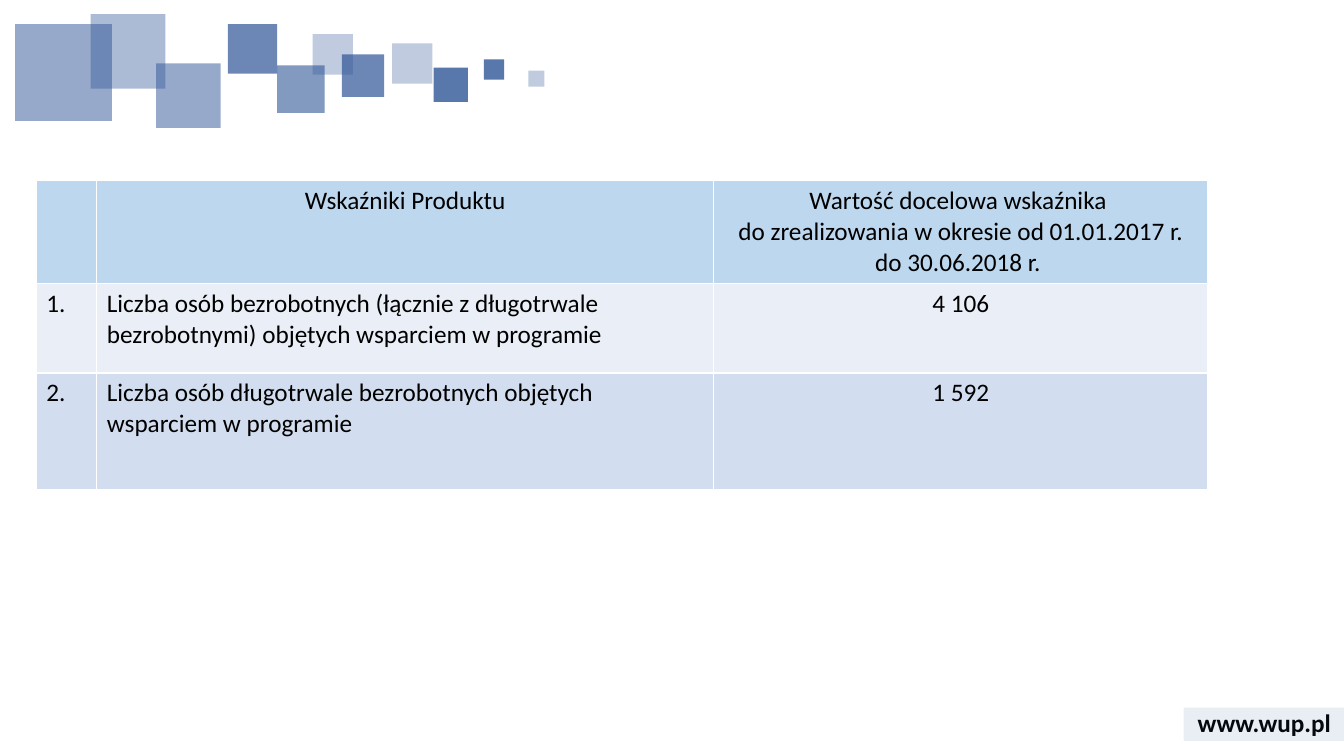
from dataclasses import dataclass

from lxml import etree
from pptx import Presentation
from pptx.dml.color import RGBColor
from pptx.enum import shapes, text
from pptx.oxml import ns
from pptx.util import Inches, Pt


@dataclass(frozen=True)
class Theme:
    font: str = "Calibri"
    size: int = 18
    ink: str = "000000"
    accent: str = "2F5597"
    border: str = "FFFFFF"
    row_fills: tuple = ("BDD7EE", "EAEFF7", "D2DEEF")


THEME = Theme()

# Left, top, side (inches within the banner) and opacity in percent
SQUARES = [
    (3.74, 0.29, 0.40, 30), (4.15, 0.53, 0.34, 80), (3.24, 0.40, 0.42, 70),
    (0.00, 0.10, 0.96, 50), (2.60, 0.51, 0.47, 60), (1.40, 0.49, 0.64, 50),
    (0.75, 0.00, 0.74, 40), (4.65, 0.45, 0.20, 80), (2.11, 0.10, 0.49, 70),
    (2.95, 0.20, 0.40, 30), (5.09, 0.56, 0.16, 30),
]

COLUMN_WIDTHS = (0.6, 6.12, 4.9)
ROW_HEIGHTS = (1.02, 0.89, 1.16)
INDICATORS = [
    ("", "Wskaźniki Produktu",
     "Wartość docelowa wskaźnika \vdo zrealizowania w okresie od 01.01.2017 r. do 30.06.2018 r. "),
    ("1.", "Liczba osób bezrobotnych (łącznie z długotrwale bezrobotnymi) "
     "objętych wsparciem w programie", "4 106"),
    ("2.", "Liczba osób długotrwale bezrobotnych objętych wsparciem w programie", "1 592"),
]


def write_text(frame, content, *, align=text.PP_ALIGN.LEFT, bold=False):
    paragraph = frame.paragraphs[0]
    paragraph.text = content
    paragraph.alignment = align
    for font in [paragraph.font] + [run.font for run in paragraph.runs]:
        font.name = THEME.font
        font.size = Pt(THEME.size)
        font.bold = bold
        font.color.rgb = RGBColor.from_string(THEME.ink)


def add_tint(parent, left, top, width, height, opacity):
    """Add a borderless accent rectangle with the given opacity in percent."""
    shape = parent.add_shape(shapes.MSO_SHAPE.RECTANGLE, Inches(left), Inches(top),
                             Inches(width), Inches(height))
    shape.shadow.inherit = False
    shape.line.fill.background()
    shape.fill.solid()
    shape.fill.fore_color.rgb = RGBColor.from_string(THEME.accent)
    color = shape.fill._xPr.find(".//" + ns.qn("a:srgbClr"))
    etree.SubElement(color, ns.qn("a:alpha"), val=str(opacity * 1000))


def add_banner(slide, left, top):
    group = slide.shapes.add_group_shape()
    for x, y, side, opacity in SQUARES:
        add_tint(group.shapes, left + x, top + y, side, side, opacity)


def add_borders(cell):
    properties = cell._tc.get_or_add_tcPr()
    for index, side in enumerate(("lnL", "lnR", "lnT", "lnB")):
        line = etree.Element(ns.qn("a:" + side), w=str(Pt(1)))
        fill = etree.SubElement(line, ns.qn("a:solidFill"))
        etree.SubElement(fill, ns.qn("a:srgbClr"), val=THEME.border)
        properties.insert(index, line)


def add_indicator_table(slide, left, top):
    table = slide.shapes.add_table(
        len(INDICATORS), len(COLUMN_WIDTHS), Inches(left), Inches(top),
        Inches(sum(COLUMN_WIDTHS)), Inches(sum(ROW_HEIGHTS))).table
    for column, width in zip(table.columns, COLUMN_WIDTHS):
        column.width = Inches(width)
    for r, (values, height) in enumerate(zip(INDICATORS, ROW_HEIGHTS)):
        table.rows[r].height = Inches(height)
        for c, value in enumerate(values):
            cell = table.cell(r, c)
            cell.fill.solid()
            cell.fill.fore_color.rgb = RGBColor.from_string(THEME.row_fills[r])
            add_borders(cell)
            centred = r == 0 or c == 2
            write_text(cell.text_frame, value,
                       align=text.PP_ALIGN.CENTER if centred else text.PP_ALIGN.LEFT)


def add_web_address(slide, left, top, width, height):
    box = slide.shapes.add_textbox(Inches(left), Inches(top), Inches(width), Inches(height))
    box.text_frame.word_wrap = True
    box.text_frame.vertical_anchor = text.MSO_ANCHOR.MIDDLE
    write_text(box.text_frame, "www.wup.pl", align=text.PP_ALIGN.CENTER, bold=True)
    add_tint(slide.shapes, left, top + 0.05, width, 0.33, 10)


def main():
    presentation = Presentation()
    presentation.slide_width = Inches(13.33)
    presentation.slide_height = Inches(7.5)
    slide = presentation.slides.add_slide(presentation.slide_layouts[6])

    # Footer, decorative banner, indicators
    add_web_address(slide, 11.74, 6.97, 1.6, 0.4)
    add_banner(slide, 0.15, 0.14)
    add_indicator_table(slide, 0.36, 1.79)

    presentation.save("out.pptx")


if __name__ == "__main__":
    main()
